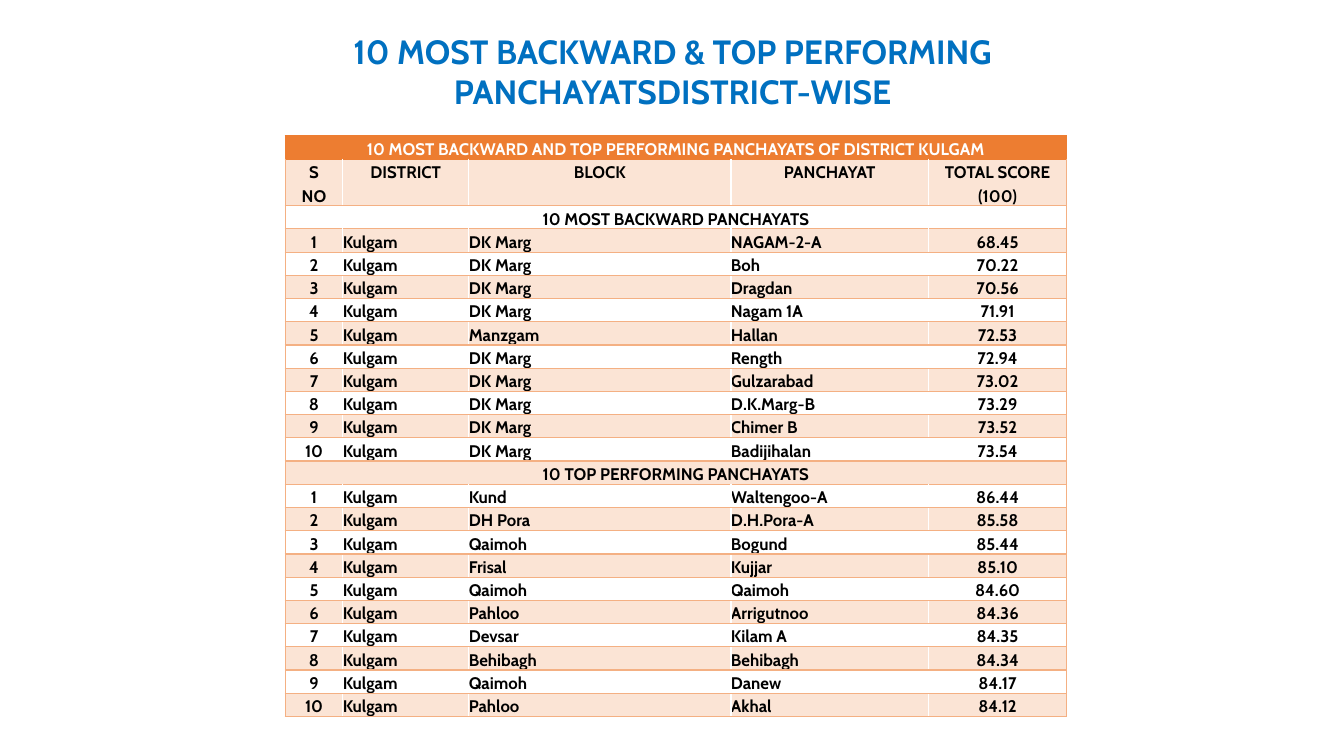
"""Build a slide ranking the most backward and top performing panchayats of Kulgam."""
from lxml.etree import SubElement
from pptx import Presentation
from pptx.dml.color import RGBColor
from pptx.enum.text import MSO_ANCHOR, PP_ALIGN
from pptx.oxml.ns import qn
from pptx.util import Inches, Pt

TITLE = "10 MOST BACKWARD & TOP PERFORMING PANCHAYATSDISTRICT-WISE"
TABLE_TITLE = "10 MOST BACKWARD AND TOP PERFORMING PANCHAYATS OF DISTRICT KULGAM"
HEADINGS = ("S\nNO", "DISTRICT", "BLOCK", "PANCHAYAT", "TOTAL SCORE\n(100)")
DISTRICT = "Kulgam"
RANKINGS = {
    "10 MOST BACKWARD PANCHAYATS": [
        ("DK Marg", "NAGAM-2-A", "68.45"),
        ("DK Marg", "Boh", "70.22"),
        ("DK Marg", "Dragdan", "70.56"),
        ("DK Marg", "Nagam 1A", "71.91"),
        ("Manzgam", "Hallan", "72.53"),
        ("DK Marg", "Rength", "72.94"),
        ("DK Marg", "Gulzarabad", "73.02"),
        ("DK Marg", "D.K.Marg-B", "73.29"),
        ("DK Marg", "Chimer B", "73.52"),
        ("DK Marg", "Badijihalan", "73.54"),
    ],
    "10 TOP PERFORMING PANCHAYATS": [
        ("Kund", "Waltengoo-A", "86.44"),
        ("DH Pora", "D.H.Pora-A", "85.58"),
        ("Qaimoh", "Bogund", "85.44"),
        ("Frisal", "Kujjar", "85.10"),
        ("Qaimoh", "Qaimoh", "84.60"),
        ("Pahloo", "Arrigutnoo", "84.36"),
        ("Devsar", "Kilam A", "84.35"),
        ("Behibagh", "Behibagh", "84.34"),
        ("Qaimoh", "Danew", "84.17"),
        ("Pahloo", "Akhal", "84.12"),
    ],
}
COLUMN_WIDTHS = (0.57, 1.25, 2.6, 1.96, 1.37)
ROW_HEIGHT, HEADING_HEIGHT = 0.21, 0.44
HEADING_ROW = 1

FONT = "Cabin"
BLUE = RGBColor(0x00, 0x70, 0xC0)
ORANGE = RGBColor(0xED, 0x7D, 0x31)
LIGHT_ORANGE = RGBColor(0xF4, 0xB0, 0x83)
PEACH = RGBColor(0xFB, 0xE4, 0xD5)
BLACK = RGBColor(0x00, 0x00, 0x00)
WHITE = RGBColor(0xFF, 0xFF, 0xFF)


def format_text(text_frame, size, color, alignment, line_spacing=None):
    for paragraph in text_frame.paragraphs:
        paragraph.alignment = alignment
        paragraph.line_spacing = line_spacing
        for run in paragraph.runs:
            run.font.name, run.font.size = FONT, Pt(size)
            run.font.bold, run.font.color.rgb = True, color


def add_border(cell, side, color):
    properties = cell._tc.get_or_add_tcPr()
    line = SubElement(properties, qn(f"a:ln{side}"), w=str(Pt(1)))
    fill = SubElement(line, qn("a:solidFill"))
    SubElement(fill, qn("a:srgbClr"), val=str(color))


def style_cell(cell, row, column, is_banner):
    last_column = len(COLUMN_WIDTHS) - 1
    borders = {
        "L": LIGHT_ORANGE if column == 0 else WHITE,
        "R": LIGHT_ORANGE if column == last_column else WHITE,
        "T": ORANGE if row <= HEADING_ROW else LIGHT_ORANGE,
        "B": ORANGE if row == 0 else LIGHT_ORANGE,
    }
    if is_banner:
        borders["L"] = borders["R"] = borders["B"]
    for side, color in borders.items():
        add_border(cell, side, color)
    if row == 0 or row % 2:
        cell.fill.solid()
        cell.fill.fore_color.rgb = PEACH if row else ORANGE
    else:
        cell.fill.background()
    cell.margin_left = cell.margin_right = cell.margin_top = cell.margin_bottom = 0
    centered = is_banner or row == HEADING_ROW or column in (0, last_column)
    format_text(cell.text_frame, 12, BLACK if row else WHITE,
                PP_ALIGN.CENTER if centered else PP_ALIGN.LEFT, 1.15)


def add_title(slide):
    title = slide.shapes.add_textbox(Inches(2.22), Inches(0.25), Inches(8.9), Inches(0.91))
    text_frame = title.text_frame
    text_frame.word_wrap = True
    text_frame.vertical_anchor = MSO_ANCHOR.MIDDLE
    text_frame.margin_left = text_frame.margin_right = Inches(0.05)
    text_frame.margin_top = text_frame.margin_bottom = Inches(0.05)
    text_frame.text = TITLE
    format_text(text_frame, 24, BLUE, PP_ALIGN.CENTER)


def add_ranking_table(slide):
    rows = [(TABLE_TITLE,), HEADINGS]
    for banner, panchayats in RANKINGS.items():
        rows.append((banner,))
        rows += [(str(rank), DISTRICT, *entry) for rank, entry in enumerate(panchayats, 1)]
    heights = [HEADING_HEIGHT if row == HEADING_ROW else ROW_HEIGHT for row in range(len(rows))]
    table = slide.shapes.add_table(
        len(rows), len(COLUMN_WIDTHS), Inches(2.83), Inches(1.35),
        Inches(sum(COLUMN_WIDTHS)), Inches(sum(heights))).table
    table.first_row = table.horz_banding = False
    for column, width in zip(table.columns, COLUMN_WIDTHS):
        column.width = Inches(width)
    for row, (values, height) in enumerate(zip(rows, heights)):
        table.rows[row].height = Inches(height)
        is_banner = len(values) == 1
        if is_banner:
            table.cell(row, 0).merge(table.cell(row, len(COLUMN_WIDTHS) - 1))
        for column, value in enumerate(values):
            table.cell(row, column).text_frame.text = value
        for column in range(len(COLUMN_WIDTHS)):
            style_cell(table.cell(row, column), row, column, is_banner)


def main():
    presentation = Presentation()
    presentation.slide_width, presentation.slide_height = Inches(13.33), Inches(7.5)
    slide = presentation.slides.add_slide(presentation.slide_layouts[6])
    add_title(slide)
    add_ranking_table(slide)
    presentation.save("out.pptx")


if __name__ == "__main__":
    main()
